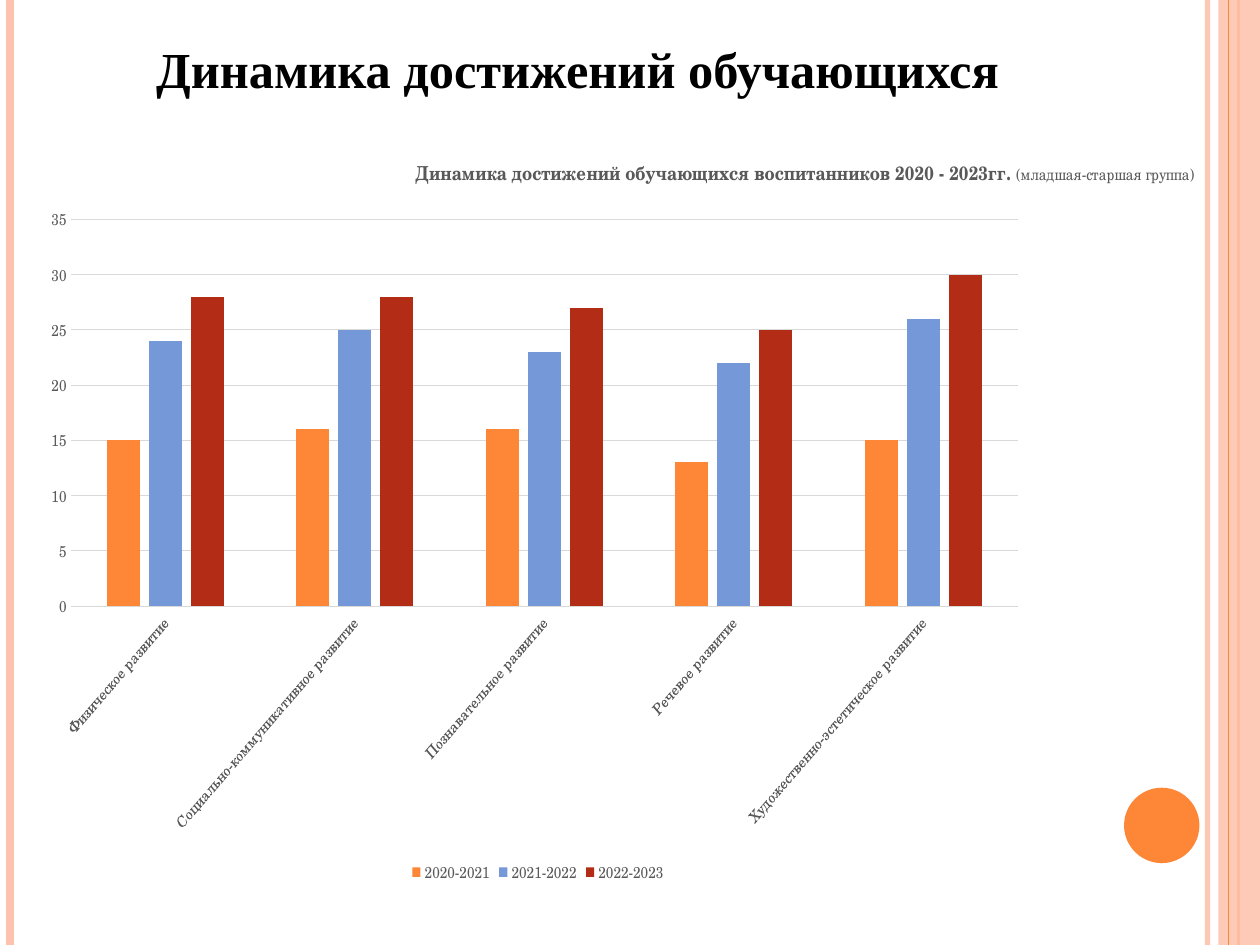
from typing import NamedTuple, Optional

from lxml import etree
from pptx import Presentation
from pptx import util as u
from pptx.chart.data import CategoryChartData
from pptx.dml.color import RGBColor
from pptx.enum import chart as charts, shapes, text
from pptx.oxml import ns, parse_xml

ORANGE = RGBColor(0xFE, 0x86, 0x37)
PEACH = RGBColor(0xFE, 0xC3, 0xAE)
BLUE = RGBColor(0x75, 0x98, 0xD9)
RED = RGBColor(0xB3, 0x2C, 0x16)
GRAY = RGBColor(0x59, 0x59, 0x59)
GRID = RGBColor(0xD9, 0xD9, 0xD9)
BLACK = RGBColor(0, 0, 0)

SERIF = "Times New Roman"
CHART_FONT = "TeX Gyre Schola"
PAGE_WIDTH, PAGE_HEIGHT = 25.4, 19.05
LABEL_ANGLE = -45


class Stripe(NamedTuple):
    x: float
    color: RGBColor
    weight: float
    opacity: Optional[int] = None


class Block(NamedTuple):
    kind: int
    left: float
    top: float
    width: float
    height: float
    color: RGBColor
    opacity: Optional[int] = None


class Year(NamedTuple):
    name: str
    values: tuple
    color: RGBColor


BACK_STRIPES = [
    Stripe(24.34, PEACH, 3, 93),
    Stripe(0.21, PEACH, 4.5),
    Stripe(24.97, ORANGE, 1.5),
]
BAND = Block(shapes.MSO_SHAPE.RECTANGLE, 24.56, 0, 0.84, PAGE_HEIGHT, PEACH, 87)
FRONT_STRIPE = Stripe(24.77, ORANGE, 0.75)
DISC = Block(shapes.MSO_SHAPE.OVAL, 22.66, 15.88, 1.52, 1.52, ORANGE)

AREAS = [
    "Физическое развитие",
    "Социально-коммуникативное развитие",
    "Познавательное развитие",
    "Речевое развитие",
    "Художественно-эстетическое развитие",
]
YEARS = [
    Year("2020-2021", (15, 16, 16, 13, 15), ORANGE),
    Year("2021-2022", (24, 25, 23, 22, 26), BLUE),
    Year("2022-2023", (28, 28, 27, 25, 30), RED),
]


def set_opacity(element, percent: Optional[int]) -> None:
    if percent is not None:
        color = next(element.iter(ns.qn("a:srgbClr")))
        etree.SubElement(color, ns.qn("a:alpha")).set("val", str(percent * 1000))


def draw_stripe(page, stripe: Stripe) -> None:
    line = page.shapes.add_connector(
        shapes.MSO_CONNECTOR.STRAIGHT,
        u.Cm(stripe.x), 0, u.Cm(stripe.x), u.Cm(PAGE_HEIGHT))
    line.line.color.rgb = stripe.color
    line.line.width = u.Pt(stripe.weight)
    properties = line._element.spPr
    set_opacity(properties, stripe.opacity)
    etree.SubElement(properties, ns.qn("a:effectLst"))


def draw_block(page, block: Block) -> None:
    shape = page.shapes.add_shape(
        block.kind, u.Cm(block.left), u.Cm(block.top),
        u.Cm(block.width), u.Cm(block.height))
    shape.shadow.inherit = False
    shape.fill.solid()
    shape.fill.fore_color.rgb = block.color
    shape.line.fill.background()
    set_opacity(shape._element.spPr, block.opacity)


def format_font(font, *, size: float, color: RGBColor = GRAY,
                name: str = CHART_FONT, bold: bool = False) -> None:
    font.name = name
    font.size = u.Pt(size)
    font.bold = bold
    font.color.rgb = color


def add_span(para, words: str, **style) -> None:
    span = para.add_run()
    span.text = words
    format_font(span.font, **style)


def place(parent, x: float, y: float, width: Optional[float] = None,
          height: Optional[float] = None, inner: bool = False) -> None:
    for old in parent.findall(ns.qn("c:layout")):
        parent.remove(old)
    parts = ['<c:layoutTarget val="inner"/>'] if inner else []
    parts += [f'<c:{axis}Mode val="edge"/>' for axis in "xy"]
    sizes = {"x": x, "y": y, "w": width, "h": height}
    parts += [f'<c:{key} val="{value}"/>' for key, value in sizes.items() if value is not None]
    layout = parse_xml(
        f'<c:layout {ns.nsdecls("c")}><c:manualLayout>{"".join(parts)}'
        '</c:manualLayout></c:layout>')
    before = parent.find(ns.qn("c:tx"))
    if before is None:
        before = parent.find(ns.qn("c:legendPos"))
    if before is None:
        parent.insert(0, layout)
    else:
        before.addnext(layout)


def draw_title(page, words: str) -> None:
    box = page.shapes.title
    box.left, box.top, box.width, box.height = map(u.Cm, (1.27, 0.76, 20.75, 1.35))
    frame = box.text_frame
    frame.word_wrap = True
    frame.auto_size = text.MSO_AUTO_SIZE.NONE
    frame.vertical_anchor = text.MSO_ANCHOR.BOTTOM
    para = frame.paragraphs[0]
    para.alignment = text.PP_ALIGN.CENTER
    add_span(para, words, size=28.8, color=BLACK, name=SERIF, bold=True)


def format_axes(chart) -> None:
    for axis in (chart.category_axis, chart.value_axis):
        axis.major_tick_mark = axis.minor_tick_mark = charts.XL_TICK_MARK.NONE
        format_font(axis.tick_labels.font, size=9)
    categories, values = chart.category_axis, chart.value_axis
    categories.format.line.color.rgb = GRID
    categories.format.line.width = u.Pt(0.75)
    body = categories._element.find(ns.qn("c:txPr")).find(ns.qn("a:bodyPr"))
    body.set("rot", str(LABEL_ANGLE * 60000))
    body.set("vert", "horz")
    values.format.line.fill.background()
    values.minimum_scale, values.maximum_scale, values.major_unit = 0, 35, 5
    values.major_gridlines.format.line.color.rgb = GRID
    values.major_gridlines.format.line.width = u.Pt(0.75)


def draw_chart(page) -> None:
    data = CategoryChartData()
    data.categories = AREAS
    for year in YEARS:
        data.add_series(year.name, year.values)
    chart = page.shapes.add_chart(
        charts.XL_CHART_TYPE.COLUMN_CLUSTERED,
        u.Cm(0.64), u.Cm(2.54), u.Cm(23.5), u.Cm(15.44), data).chart
    format_font(chart.font, size=10, color=BLACK)

    chart.has_title = True
    para = chart.chart_title.text_frame.paragraphs[0]
    add_span(para, "Динамика достижений обучающихся воспитанников 2020 - 2023гг. ",
             size=11, bold=True)
    add_span(para, "(младшая-старшая группа)", size=9)
    place(chart.chart_title._element, 0.379, 0.032)

    plot = chart.plots[0]
    plot.gap_width, plot.overlap = 219, -27
    plot.vary_by_categories = False
    for series, year in zip(plot.series, YEARS):
        series.format.fill.solid()
        series.format.fill.fore_color.rgb = year.color
    place(chart._chartSpace.chart.plotArea, 0.039, 0.122, 0.943, 0.505, inner=True)

    format_axes(chart)
    chart.has_legend = True
    chart.legend.position = charts.XL_LEGEND_POSITION.BOTTOM
    chart.legend.include_in_layout = False
    format_font(chart.legend.font, size=9)
    place(chart.legend._element, 0.374, 0.958, 0.26, 0.04)


def main() -> None:
    deck = Presentation()
    deck.slide_width, deck.slide_height = u.Cm(PAGE_WIDTH), u.Cm(PAGE_HEIGHT)
    page = deck.slides.add_slide(deck.slide_layouts[5])
    for stripe in BACK_STRIPES:
        draw_stripe(page, stripe)
    draw_block(page, BAND)
    draw_stripe(page, FRONT_STRIPE)
    draw_block(page, DISC)
    draw_title(page, "Динамика достижений обучающихся")
    draw_chart(page)
    deck.save("out.pptx")


if __name__ == "__main__":
    main()
